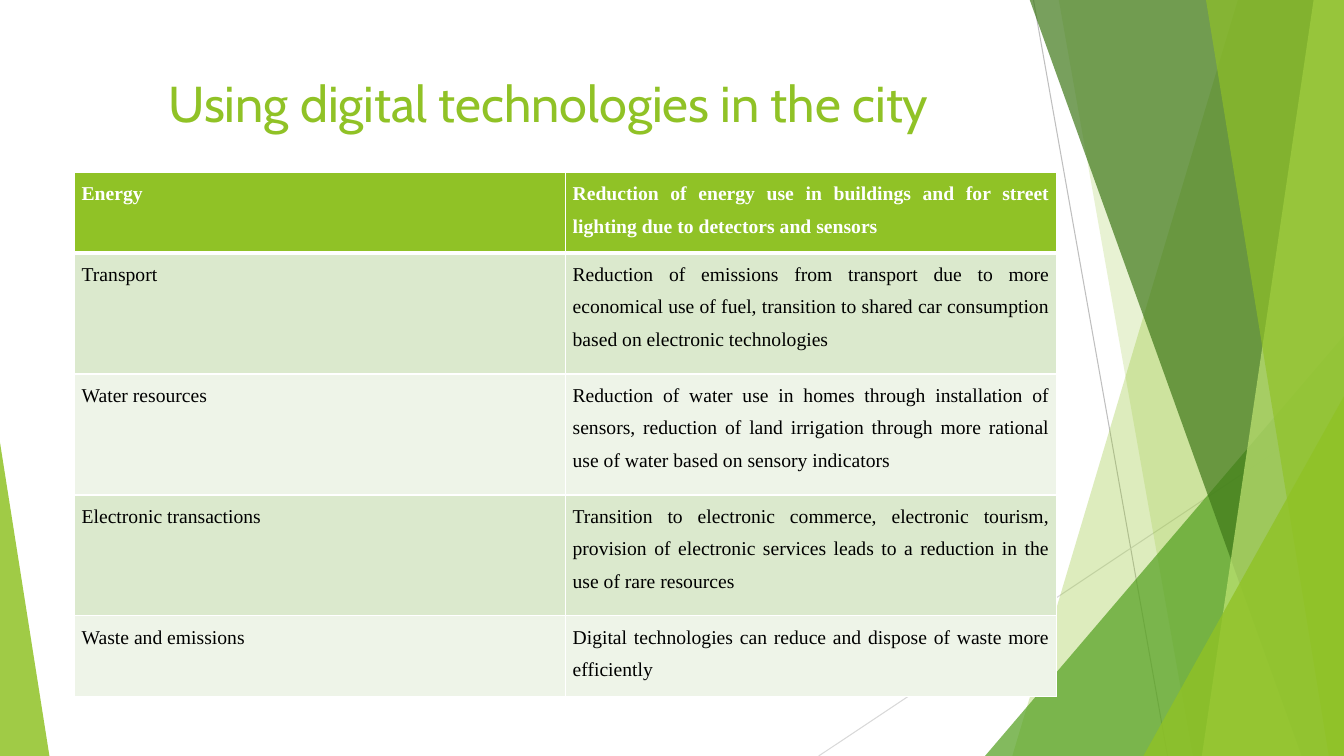
from pptx import Presentation
from pptx.dml.color import RGBColor
from pptx.enum.shapes import MSO_CONNECTOR, MSO_SHAPE
from pptx.enum.text import MSO_ANCHOR, PP_ALIGN
from pptx.oxml.ns import qn
from pptx.util import Inches, Pt
from lxml.etree import SubElement, Element

W, H = 13.33, 7.5
TOP = -0.01
WHITE = RGBColor(0xFF, 0xFF, 0xFF)
BLACK = RGBColor(0, 0, 0)
LIME = RGBColor(0x90, 0xC2, 0x26)
PALE_LIME = RGBColor(0xC0, 0xE4, 0x74)
GREEN = RGBColor(0x54, 0xA0, 0x21)
DARK_GREEN = RGBColor(0x3F, 0x78, 0x19)
GREY = RGBColor(0xBF, 0xBF, 0xBF)
LIGHT_GREY = RGBColor(0xD9, 0xD9, 0xD9)
BANDS = RGBColor(0xDB, 0xE9, 0xCD), RGBColor(0xEE, 0xF4, 0xE8)

TITLE = "Using digital technologies in the city"
ROWS = [
    ("Energy", "Reduction of energy use in buildings and for street lighting due to detectors and sensors"),
    ("Transport", "Reduction of emissions from transport due to more economical use of fuel, "
                  "transition to shared car consumption based on electronic technologies"),
    ("Water resources", "Reduction of water use in homes through installation of sensors, reduction of "
                        "land irrigation through more rational use of water based on sensory indicators"),
    ("Electronic transactions", "Transition to electronic commerce, electronic tourism, provision of "
                                "electronic services leads to a reduction in the use of rare resources"),
    ("Waste and emissions", "Digital technologies can reduce and dispose of waste more efficiently"),
]
ROW_HEIGHTS = [0.8, 1.2, 1.2, 1.2, 0.8]
LEFT, TABLE_TOP, COL_W = 0.74, 1.71, 4.87

RAYS = [((10.25, 0), (11.58, H), GREY), ((W, 4.03), (8.12, H), LIGHT_GREY)]
# Back to front: a band is (x at top, x at bottom), a wedge is (left, top, width, apex share)
FACETS = [
    ("band", (12.28, 10.04), LIME, 30),
    ("band", (10.5, 11.83), LIME, 20),
    ("wedge", (9.77, 3.33, 3.56, 1), GREEN, 72),
    ("band", (10.21, 12.91), DARK_GREEN, 70),
    ("band", (13.03, 11.92), PALE_LIME, 70),
    ("band", (11.96, 13.18), LIME, 65),
    ("wedge", (11.34, 3.93, 1.99, 1), LIME, 80),
    ("wedge", (0, 4.39, 0.49, 0), LIME, 85),
]


def add_ray(shapes, start, end, color):
    line = shapes.add_connector(MSO_CONNECTOR.STRAIGHT, *map(Inches, start + end))
    line.line.color.rgb = color
    line.line.width = Pt(0.75)
    SubElement(line._element.spPr, qn("a:effectLst"))


def add_band(shapes, x_top, x_bottom):
    """Quadrilateral from a slanted left edge to the slide's right edge."""
    corners = [(x_top, TOP), (W, TOP), (W, H), (x_bottom, H)]
    points = [(Inches(x), Inches(y)) for x, y in corners]
    builder = shapes.build_freeform(*points[0], scale=1.0)
    builder.add_line_segments(points[1:], close=True)
    return builder.convert_to_shape()


def add_wedge(shapes, left, top, width, apex):
    """Triangle standing on the slide's bottom edge."""
    sp = shapes.add_shape(MSO_SHAPE.ISOSCELES_TRIANGLE, *map(Inches, (left, top, width, H - top)))
    sp.adjustments[0] = apex
    return sp


def paint(sp, color, opacity):
    sp.shadow.inherit = False
    sp.line.fill.background()
    sp.fill.solid()
    sp.fill.fore_color.rgb = color
    clr = sp._element.spPr.find(qn("a:solidFill"))[0]
    SubElement(clr, qn("a:alpha"), val=str(opacity * 1000))


def write(tf, text, align, spacing, **font):
    p = tf.paragraphs[0]
    p.alignment, p.line_spacing = align, spacing
    r = p.add_run()
    r.text = text
    r.font.color.rgb = font.pop("color")
    for name, value in font.items():
        setattr(r.font, name, value)


def set_borders(cell, **widths):
    tc_pr = cell._tc.get_or_add_tcPr()
    for i, side in enumerate("LRTB"):
        ln = Element(qn("a:ln" + side), w=str(Pt(widths.get(side, 1))))
        SubElement(SubElement(ln, qn("a:solidFill")), qn("a:srgbClr"), val=str(WHITE))
        tc_pr.insert(i, ln)


def add_title(shapes):
    tf = shapes.add_textbox(*map(Inches, (LEFT, 0.67, 9.4, 1.44))).text_frame
    tf.word_wrap = True
    tf.vertical_anchor = MSO_ANCHOR.TOP
    write(tf, TITLE, PP_ALIGN.CENTER, 1.0, name="Cabin", size=Pt(36), color=LIME)


def add_measures(shapes):
    box = LEFT, TABLE_TOP, 2 * COL_W, sum(ROW_HEIGHTS)
    table = shapes.add_table(len(ROWS), 2, *map(Inches, box)).table
    for col in table.columns:
        col.width = Inches(COL_W)
    for i, (row, height) in enumerate(zip(ROWS, ROW_HEIGHTS)):
        table.rows[i].height = Inches(height)
        header = i == 0
        for j, text in enumerate(row):
            cell = table.cell(i, j)
            cell.margin_left = cell.margin_right = Inches(0.07)
            cell.margin_top = cell.margin_bottom = 0
            cell.fill.solid()
            cell.fill.fore_color.rgb = LIME if header else BANDS[(i - 1) % 2]
            set_borders(cell, T=3 if i == 1 else 1, B=3 if header else 1)
            write(cell.text_frame, text, PP_ALIGN.JUSTIFY, 1.5, name="Times New Roman",
                  size=Pt(14), bold=header, color=WHITE if header else BLACK)


def main():
    prs = Presentation()
    prs.slide_width, prs.slide_height = Inches(W), Inches(H)
    shapes = prs.slides.add_slide(prs.slide_layouts[6]).shapes
    for ray in RAYS:
        add_ray(shapes, *ray)
    makers = {"band": add_band, "wedge": add_wedge}
    for kind, place, color, opacity in FACETS:
        paint(makers[kind](shapes, *place), color, opacity)
    add_title(shapes)
    add_measures(shapes)
    prs.save("out.pptx")


if __name__ == "__main__":
    main()
